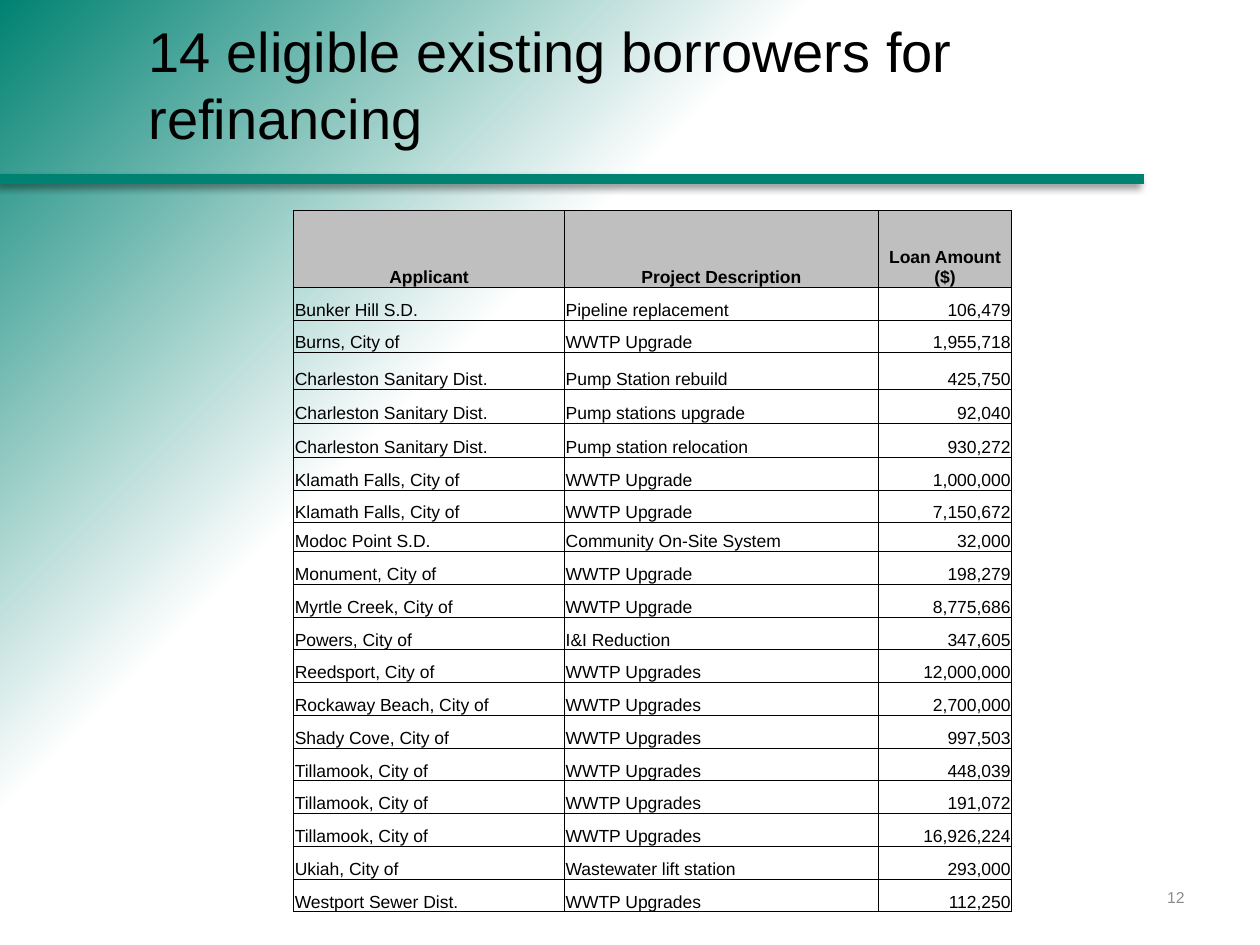
from lxml import etree
from pptx import Presentation
from pptx import util as u
from pptx.dml.color import RGBColor
from pptx.enum import shapes, text
from pptx.oxml import ns

GREEN, BLACK, WHITE, HEADER_GREY, NUMBER_GREY = "008272", "000000", "FFFFFF", "BFBFBF", "8C8C8C"
LEFT, CENTER, RIGHT = text.PP_ALIGN.LEFT, text.PP_ALIGN.CENTER, text.PP_ALIGN.RIGHT
TOP, MIDDLE, BOTTOM = text.MSO_ANCHOR.TOP, text.MSO_ANCHOR.MIDDLE, text.MSO_ANCHOR.BOTTOM

HEADINGS = ("Applicant", "Project Description", "Loan Amount ($)")
LOANS = [
    ("Bunker Hill S.D.", "Pipeline replacement", "106,479"),
    ("Burns, City of", "WWTP Upgrade", "1,955,718"),
    ("Charleston Sanitary Dist.", "Pump Station rebuild", "425,750"),
    ("Charleston Sanitary Dist.", "Pump stations upgrade", "92,040"),
    ("Charleston Sanitary Dist.", "Pump station relocation", "930,272"),
    ("Klamath Falls, City of", "WWTP Upgrade", "1,000,000"),
    ("Klamath Falls, City of", "WWTP Upgrade", "7,150,672"),
    ("Modoc Point S.D.", "Community On-Site System", "32,000"),
    ("Monument, City of", "WWTP Upgrade", "198,279"),
    ("Myrtle Creek, City of", "WWTP Upgrade", "8,775,686"),
    ("Powers, City of", "I&I Reduction", "347,605"),
    ("Reedsport, City of", "WWTP Upgrades", "12,000,000"),
    ("Rockaway Beach, City of", "WWTP Upgrades", "2,700,000"),
    ("Shady Cove, City of", "WWTP Upgrades", "997,503"),
    ("Tillamook, City of", "WWTP Upgrades", "448,039"),
    ("Tillamook, City of", "WWTP Upgrades", "191,072"),
    ("Tillamook, City of", "WWTP Upgrades", "16,926,224"),
    ("Ukiah, City of", "Wastewater lift station", "293,000"),
    ("Westport Sewer Dist.", "WWTP Upgrades", "112,250"),
]
COLUMN_WIDTHS = (2.15, 2.49, 1.06)
ROW_HEIGHT = 0.26
SPECIAL_HEIGHTS = {0: 0.61, 3: 0.29, 4: 0.27, 5: 0.27, 8: 0.23}


def color(hex_value):
    return RGBColor.from_string(hex_value)


def write(frame, words, size=10, fill=BLACK, bold=False, align=LEFT, font="Arial"):
    paragraph = frame.paragraphs[0]
    paragraph.alignment = align
    run = paragraph.add_run()
    run.text = words
    run.font.name, run.font.size, run.font.bold = font, u.Pt(size), bold
    run.font.color.rgb = color(fill)


def add_xml(parent, tag, **attributes):
    return etree.SubElement(parent, ns.qn(tag), {k: str(v) for k, v in attributes.items()})


class LoanSlide:
    def __init__(self, deck):
        self.slide = deck.slides.add_slide(deck.slide_layouts[5])

    def background(self):
        fill = self.slide.background.fill
        fill.gradient()
        fill.gradient_angle = 135
        for stop, (position, shade) in zip(fill.gradient_stops, ((0.63, WHITE), (1, GREEN))):
            stop.position = position
            stop.color.rgb = color(shade)

    def rule(self, x1, x2, y):
        line = self.slide.shapes.add_connector(
            shapes.MSO_CONNECTOR.STRAIGHT, u.Inches(x1), u.Inches(y), u.Inches(x2), u.Inches(y))
        line.line.color.rgb = color(GREEN)
        line.line.width = u.Pt(6)
        effects = add_xml(line._element.spPr, "a:effectLst")
        shadow = add_xml(effects, "a:outerShdw", blurRad=u.Pt(4), dist=u.Pt(3),
                         dir=135 * 60000, algn="ctr", rotWithShape=0)
        add_xml(add_xml(shadow, "a:srgbClr", val=BLACK), "a:alpha", val=40000)

    def title(self, words, left, top, width, height):
        heading = self.slide.shapes.title
        heading.left, heading.top = u.Inches(left), u.Inches(top)
        heading.width, heading.height = u.Inches(width), u.Inches(height)
        frame = heading.text_frame
        frame.word_wrap, frame.auto_size = True, text.MSO_AUTO_SIZE.NONE
        frame.vertical_anchor = TOP
        write(frame, words, size=32)

    def page_number(self, number, left, top, width, height):
        frame = self.slide.shapes.add_textbox(
            u.Inches(left), u.Inches(top), u.Inches(width), u.Inches(height)).text_frame
        frame.word_wrap, frame.vertical_anchor = True, MIDDLE
        write(frame, number, size=9, fill=NUMBER_GREY, align=RIGHT)

    def cell(self, cell, words, align, is_header):
        cell.margin_left = cell.margin_right = cell.margin_top = u.Inches(0.01)
        cell.margin_bottom = 0
        cell.vertical_anchor = BOTTOM
        write(cell.text_frame, words, bold=is_header, align=align)
        if is_header:
            cell.fill.solid()
            cell.fill.fore_color.rgb = color(HEADER_GREY)
        else:
            cell.fill.background()
        # Borders go ahead of the fill
        properties = cell._tc.get_or_add_tcPr()
        for place, side in enumerate(("a:lnL", "a:lnR", "a:lnT", "a:lnB")):
            border = add_xml(properties, side, w=u.Pt(0.5))
            add_xml(add_xml(border, "a:solidFill"), "a:srgbClr", val=BLACK)
            properties.insert(place, border)

    def table(self, rows, left, top):
        heights = [SPECIAL_HEIGHTS.get(i, ROW_HEIGHT) for i in range(len(rows))]
        table = self.slide.shapes.add_table(
            len(rows), len(COLUMN_WIDTHS), u.Inches(left), u.Inches(top),
            u.Inches(sum(COLUMN_WIDTHS)), u.Inches(sum(heights))).table
        table.first_row = table.horz_banding = False
        for column, width in zip(table.columns, COLUMN_WIDTHS):
            column.width = u.Inches(width)
        for r, (row, height) in enumerate(zip(rows, heights)):
            table.rows[r].height = u.Inches(height)
            alignments = (LEFT, LEFT, RIGHT) if r else (CENTER,) * 3
            for c, (words, align) in enumerate(zip(row, alignments)):
                self.cell(table.cell(r, c), words, align, is_header=r == 0)


def main():
    deck = Presentation()
    deck.slide_width, deck.slide_height = u.Inches(10), u.Inches(7.5)
    page = LoanSlide(deck)

    # Backdrop and rule under the title
    page.background()
    page.rule(0, 9.08, 1.42)

    # Title, page number and loan table
    page.title("14 eligible existing borrowers for refinancing", 1.08, 0.08, 8.58, 1.72)
    page.page_number("12", 7.17, 6.92, 2.33, 0.4)
    page.table([HEADINGS] + LOANS, 2.33, 1.67)
    deck.save("out.pptx")


if __name__ == "__main__":
    main()
